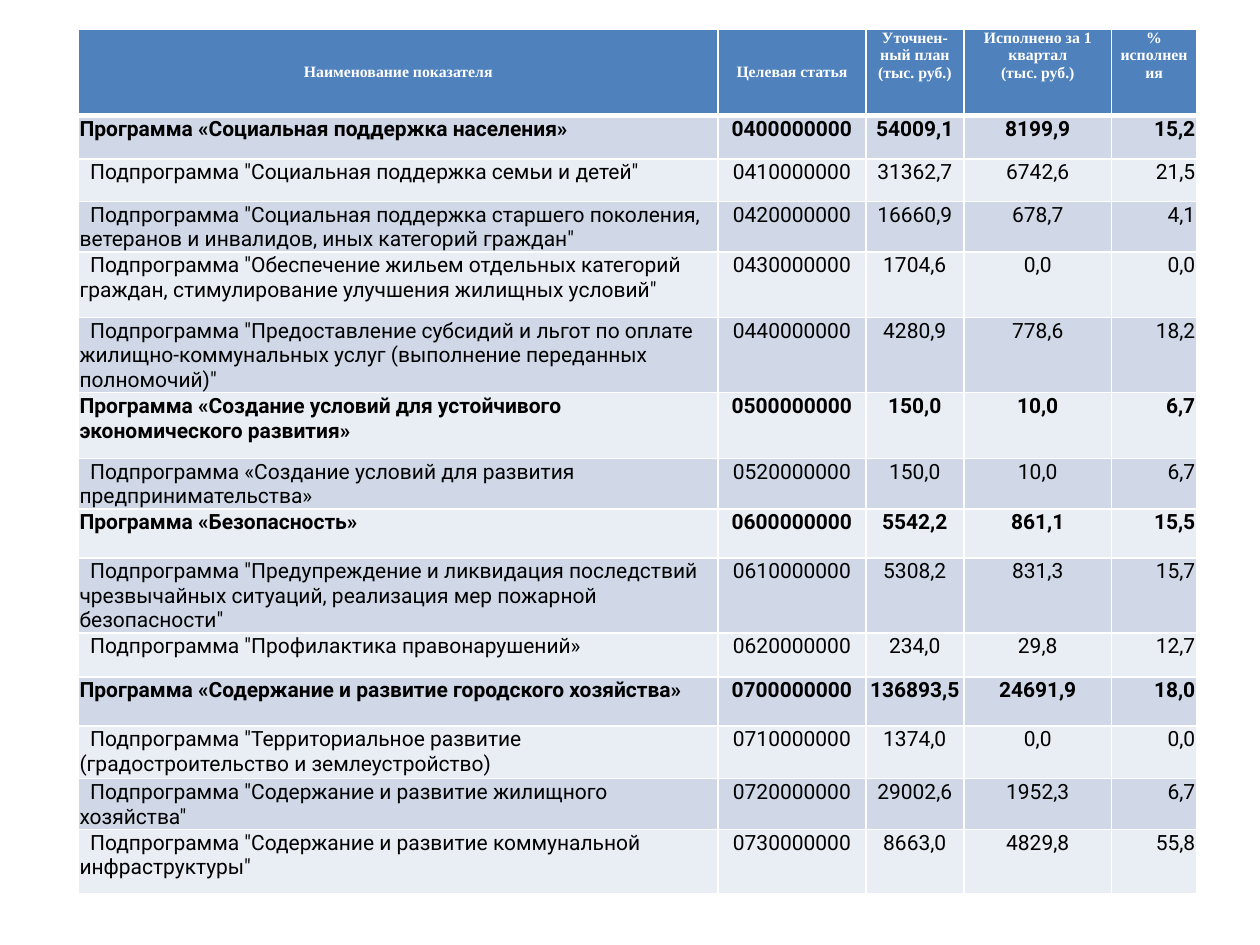
import pptx
import pptx.dml.color
import pptx.enum.text
import pptx.oxml
import pptx.oxml.ns
import pptx.util

Pt = pptx.util.Pt
RGB = pptx.dml.color.RGBColor
ALIGN = pptx.enum.text.PP_ALIGN
ANCHOR = pptx.enum.text.MSO_ANCHOR

WHITE = RGB(0xFF, 0xFF, 0xFF)
BLACK = RGB(0x00, 0x00, 0x00)
HEADER_BLUE = RGB(0x4F, 0x81, 0xBD)
BANDS = [RGB(0xD0, 0xD8, 0xE8), RGB(0xE9, 0xED, 0xF4)]

COL_WIDTHS = [365.5, 84.5, 56, 84.5, 48.5]
COL_ALIGNS = [ALIGN.LEFT, ALIGN.CENTER, ALIGN.CENTER, ALIGN.CENTER, ALIGN.RIGHT]
HEADER_HEIGHT = 49.2
HEADERS = [
    "Наименование показателя",
    "Целевая статья",
    "Уточнен-ный план\n(тыс. руб.)",
    "Исполнено за 1 квартал\n(тыс. руб.)",
    "% исполнения",
]

# Row height, then name, budget code, plan, executed, percent
ROWS = [
    (25, "Программа «Социальная поддержка населения»",
     "0400000000", "54009,1", "8199,9", "15,2"),
    (24.3, 'Подпрограмма "Социальная поддержка семьи и детей"',
     "0410000000", "31362,7", "6742,6", "21,5"),
    (28.8, 'Подпрограмма "Социальная поддержка старшего поколения, '
     'ветеранов и инвалидов, иных категорий граждан"',
     "0420000000", "16660,9", "678,7", "4,1"),
    (37.5, 'Подпрограмма "Обеспечение жильем отдельных категорий граждан, '
     'стимулирование улучшения жилищных условий"',
     "0430000000", "1704,6", "0,0", "0,0"),
    (43, 'Подпрограмма "Предоставление субсидий и льгот по оплате '
     'жилищно-коммунальных услуг (выполнение переданных полномочий)"',
     "0440000000", "4280,9", "778,6", "18,2"),
    (37.5, "Программа «Создание условий для устойчивого экономического развития»",
     "0500000000", "150,0", "10,0", "6,7"),
    (29, "Подпрограмма «Создание условий для развития предпринимательства»",
     "0520000000", "150,0", "10,0", "6,7"),
    (28, "Программа «Безопасность»",
     "0600000000", "5542,2", "861,1", "15,5"),
    (43, 'Подпрограмма "Предупреждение и ликвидация последствий '
     'чрезвычайных ситуаций, реализация мер пожарной безопасности"',
     "0610000000", "5308,2", "831,3", "15,7"),
    (25, 'Подпрограмма "Профилактика правонарушений»',
     "0620000000", "234,0", "29,8", "12,7"),
    (28.2, "Программа «Содержание и развитие городского хозяйства»",
     "0700000000", "136893,5", "24691,9", "18,0"),
    (30, 'Подпрограмма "Территориальное развитие '
     '(градостроительство и землеустройство)',
     "0710000000", "1374,0", "0,0", "0,0"),
    (29, 'Подпрограмма "Содержание и развитие жилищного хозяйства"',
     "0720000000", "29002,6", "1952,3", "6,7"),
    (37, 'Подпрограмма "Содержание и развитие коммунальной инфраструктуры"',
     "0730000000", "8663,0", "4829,8", "55,8"),
]


def set_borders(cell, bottom=1, top=1):
    """Draw white cell borders; widths are in points."""
    tcPr = cell._tc.get_or_add_tcPr()
    for side, width in (("L", 1), ("R", 1), ("T", top), ("B", bottom)):
        tcPr.append(pptx.oxml.parse_xml(
            f'<a:ln{side} {pptx.oxml.ns.nsdecls("a")} w="{Pt(width)}">'
            f'<a:solidFill><a:srgbClr val="{WHITE}"/></a:solidFill></a:ln{side}>'))


def set_cell(cell, text, align, font, size, color, bold, fill, side_inset, top_inset):
    cell.fill.solid()
    cell.fill.fore_color.rgb = fill
    cell.margin_left = cell.margin_right = Pt(side_inset)
    cell.margin_top, cell.margin_bottom = Pt(top_inset), 0
    cell.text = text
    for p in cell.text_frame.paragraphs:
        p.alignment = align
        p.font.name, p.font.size = font, Pt(size)
        p.font.bold, p.font.color.rgb = bold, color


def add_header(tbl):
    for i, text in enumerate(HEADERS):
        cell = tbl.cell(0, i)
        set_borders(cell, bottom=3)
        set_cell(cell, text, ALIGN.CENTER, "Times New Roman", 9, WHITE, True,
                 HEADER_BLUE, 5, 0)
        cell.vertical_anchor = ANCHOR.MIDDLE if i < 2 else ANCHOR.TOP


def add_row(tbl, row, values):
    is_program = values[0].startswith("Программа")
    for i, (text, align) in enumerate(zip(values, COL_ALIGNS)):
        cell = tbl.cell(row, i)
        set_borders(cell, top=3 if row == 1 else 1)
        set_cell(cell, text, align, "Roboto", 12, BLACK, is_program,
                 BANDS[(row - 1) % 2], 0.7, 0.7)
    # Subprograms start with a first-line indent
    if not is_program:
        p = tbl.cell(row, 0).text_frame.paragraphs[0]
        p._p.get_or_add_pPr().set("indent", str(Pt(6)))


def main():
    prs = pptx.Presentation()
    prs.slide_width, prs.slide_height = Pt(720), Pt(540)
    s = prs.slides.add_slide(prs.slide_layouts[6])

    # Table grid
    heights = [HEADER_HEIGHT] + [r[0] for r in ROWS]
    tbl = s.shapes.add_table(len(heights), len(COL_WIDTHS), Pt(44.8), Pt(16.7),
                             Pt(sum(COL_WIDTHS)), Pt(sum(heights))).table
    for col, width in zip(tbl.columns, COL_WIDTHS):
        col.width = Pt(width)
    for row, height in zip(tbl.rows, heights):
        row.height = Pt(height)

    # Contents
    add_header(tbl)
    for i, (_, *values) in enumerate(ROWS, start=1):
        add_row(tbl, i, values)

    prs.save("out.pptx")


if __name__ == "__main__":
    main()
